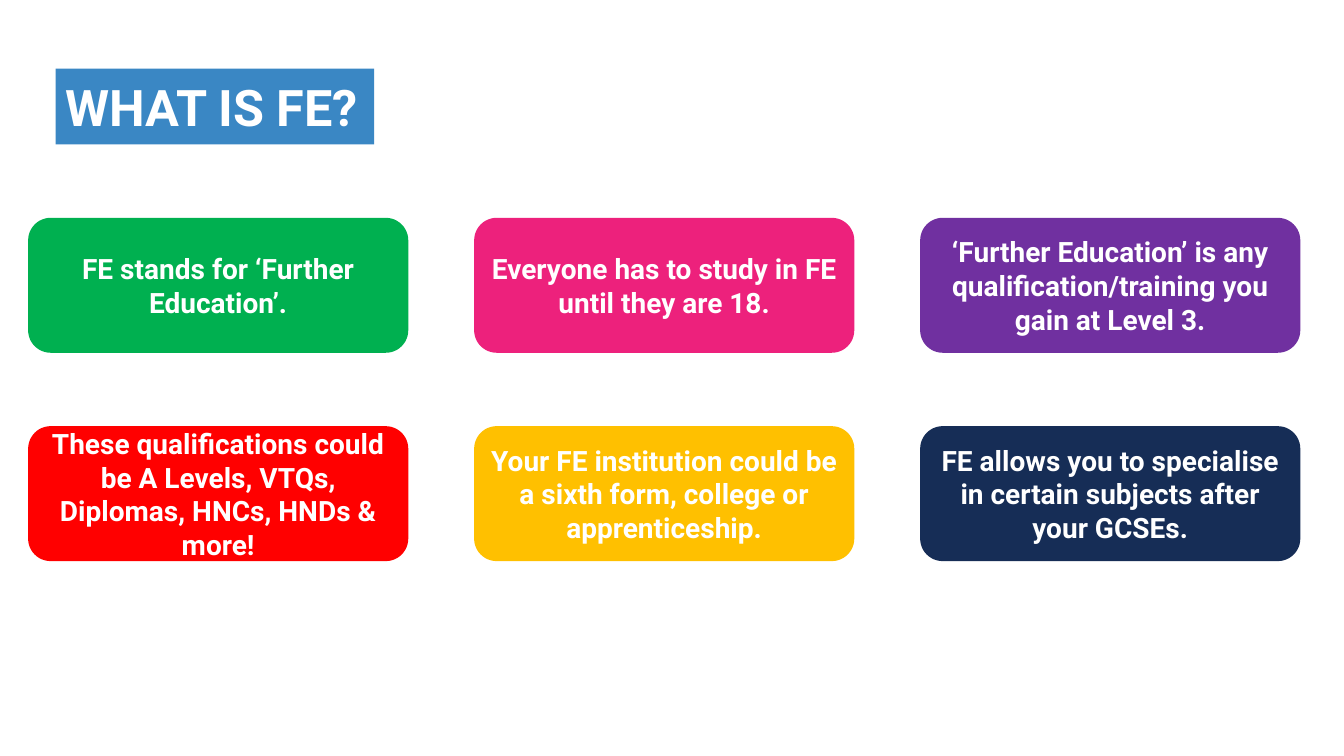
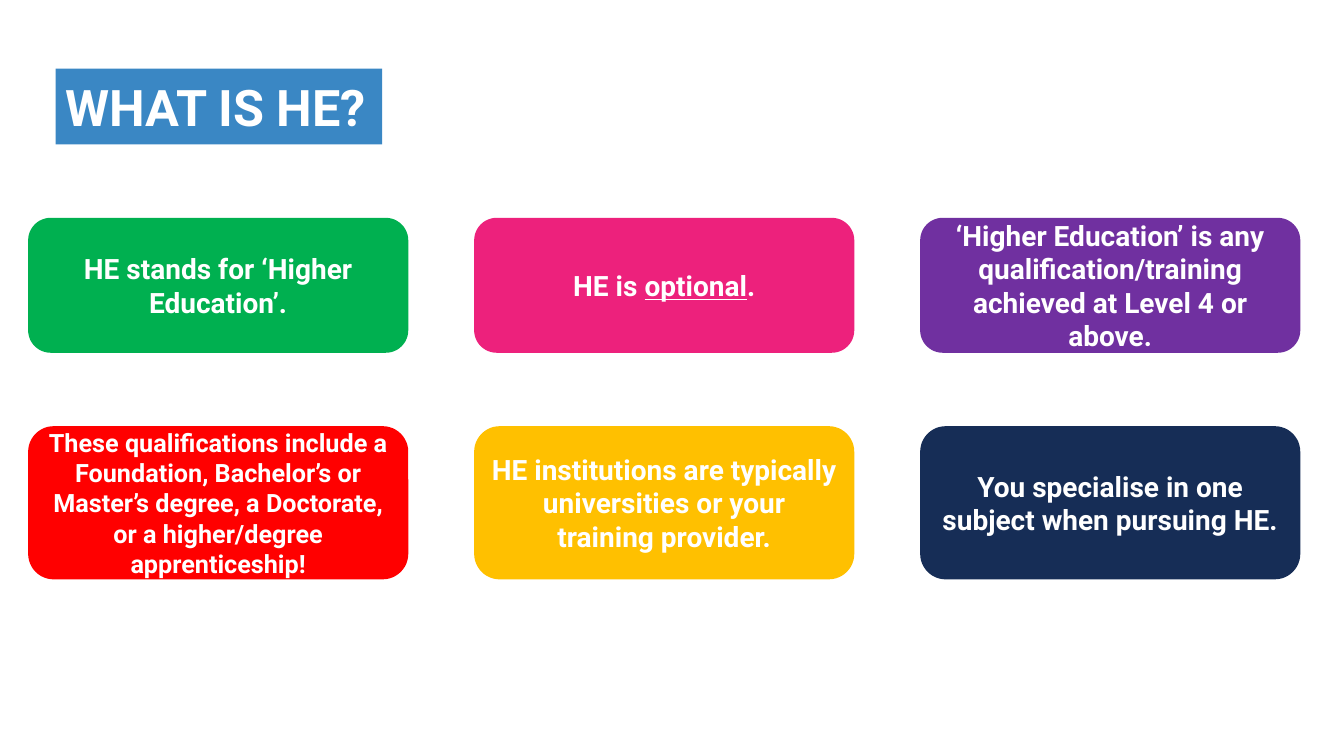
from pptx import Presentation
from pptx.dml.color import RGBColor
from pptx.enum import shapes, text
from pptx.util import Cm, Pt

COLOURS = {
    "title": "3A87C4", "white": "FFFFFF",
    "green": "00B050", "pink": "ED217C", "purple": "7030A0",
    "red": "FF0000", "amber": "FFC000", "navy": "162D56",
}
CARD_FILLS = ["green", "pink", "purple", "red", "amber", "navy"]

# Each card is a list of runs: (text, format that differs from the card style).
SLIDES = [
    {
        "title": "WHAT IS FE?", "title_width": 8.03, "row_heights": [3.4, 3.4],
        "cards": [
            [("FE stands for ‘Further Education’.", {})],
            [("Everyone has to study in FE until they are 18.", {})],
            [("‘Further Education’ is any qualification/training you gain at Level 3.", {})],
            [("These qualifications could be A Levels, VTQs, Diplomas, HNCs, HNDs & more!", {})],
            [("Your FE institution could be a sixth form, college or apprenticeship.", {})],
            [("FE allows you to specialise in certain subjects after your GCSEs.", {})],
        ],
    },
    {
        "title": "WHAT IS HE?", "title_width": 8.23, "row_heights": [3.4, 3.86],
        "cards": [
            [("HE stands for ‘Higher Education’.", {})],
            [("HE is ", {}), ("optional", {"underline": True}), (".", {})],
            [("‘Higher Education’ is any qualification/training achieved at Level 4 or above.", {})],
            [("These qualifications include a Foundation, Bachelor’s or Master’s degree, "
              "a Doctorate, or a higher/degree apprenticeship!", {"size": Pt(18)})],
            [("HE institutions are typically universities or your training provider.", {})],
            [("You specialise in one subject when pursuing HE.", {})],
        ],
    },
]

TITLE_LEFT, TITLE_TOP, TITLE_HEIGHT = 1.4, 1.73, 1.91
GRID_LEFT, COLUMN_PITCH, CARD_WIDTH, COLUMNS = 0.71, 11.24, 9.58, 3
ROW_TOPS = [5.49, 10.74]

TITLE_FORMAT = {"name": "Roboto", "size": Pt(36), "bold": True}
CARD_FORMAT = {"name": "Roboto", "size": Pt(20), "bold": True}


def add_panel(slide, preset, box, fill, runs, font_format, align):
    """Add a borderless filled shape holding one paragraph of white text."""
    panel = slide.shapes.add_shape(preset, *(Cm(length) for length in box))
    panel.shadow.inherit = False
    panel.fill.solid()
    panel.fill.fore_color.rgb = RGBColor.from_string(COLOURS[fill])
    panel.line.fill.background()
    frame = panel.text_frame
    frame.word_wrap = True
    frame.vertical_anchor = text.MSO_ANCHOR.MIDDLE
    paragraph = frame.paragraphs[0]
    paragraph.alignment = align
    for words, changes in runs:
        run = paragraph.add_run()
        run.text = words
        for attribute, value in {**font_format, **changes}.items():
            setattr(run.font, attribute, value)
        run.font.color.rgb = RGBColor.from_string(COLOURS["white"])


def add_topic(deck, topic):
    slide = deck.slides.add_slide(deck.slide_layouts[6])
    add_panel(slide, shapes.MSO_SHAPE.RECTANGLE,
              (TITLE_LEFT, TITLE_TOP, topic["title_width"], TITLE_HEIGHT),
              "title", [(topic["title"], {})], TITLE_FORMAT, text.PP_ALIGN.LEFT)
    for index, (fill, runs) in enumerate(zip(CARD_FILLS, topic["cards"])):
        row, column = divmod(index, COLUMNS)
        box = (GRID_LEFT + column * COLUMN_PITCH, ROW_TOPS[row],
               CARD_WIDTH, topic["row_heights"][row])
        add_panel(slide, shapes.MSO_SHAPE.ROUNDED_RECTANGLE, box,
                  fill, runs, CARD_FORMAT, text.PP_ALIGN.CENTER)


def main():
    deck = Presentation()
    deck.slide_width, deck.slide_height = Cm(33.87), Cm(19.05)
    for topic in SLIDES:
        add_topic(deck, topic)
    deck.save("out.pptx")


if __name__ == "__main__":
    main()
